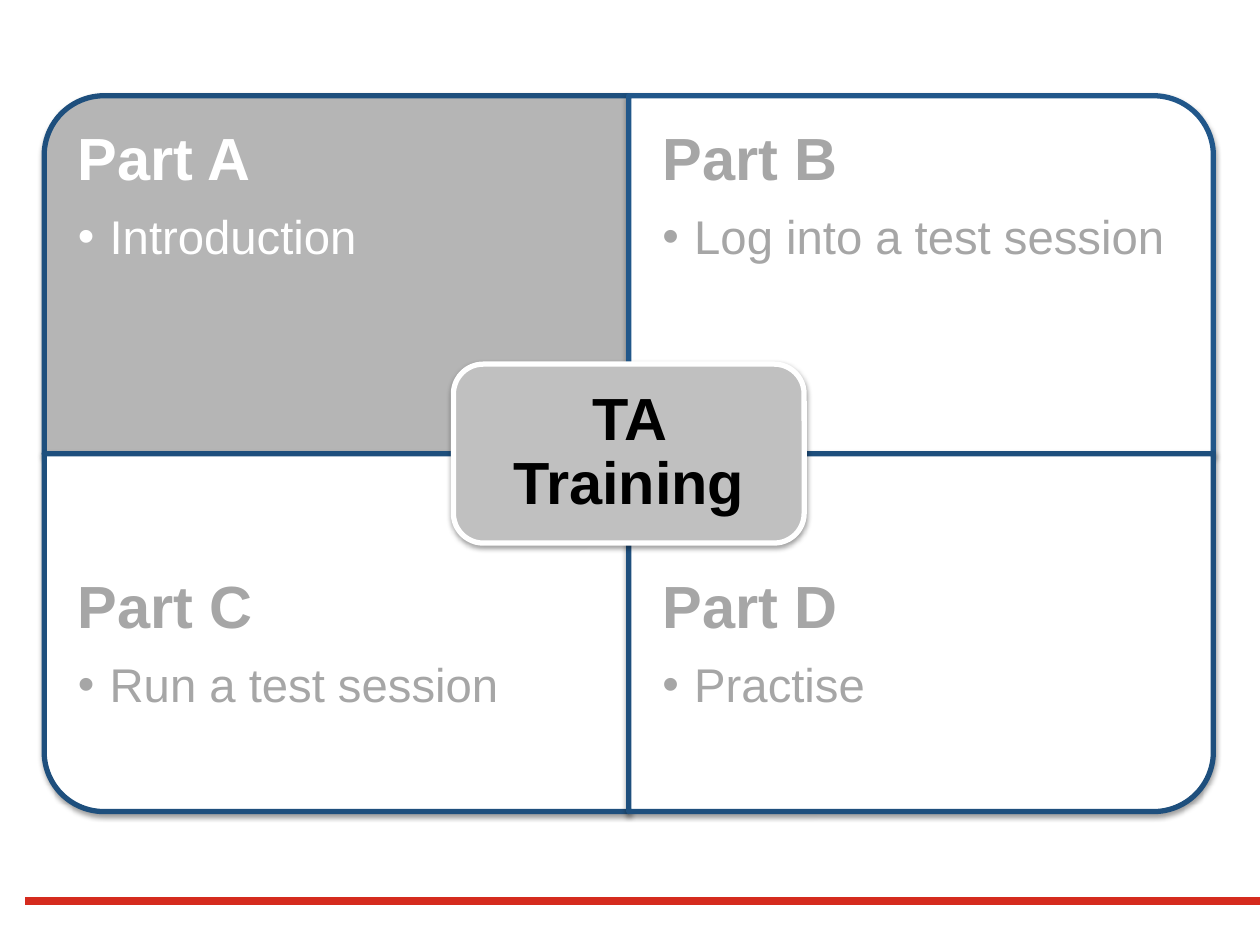
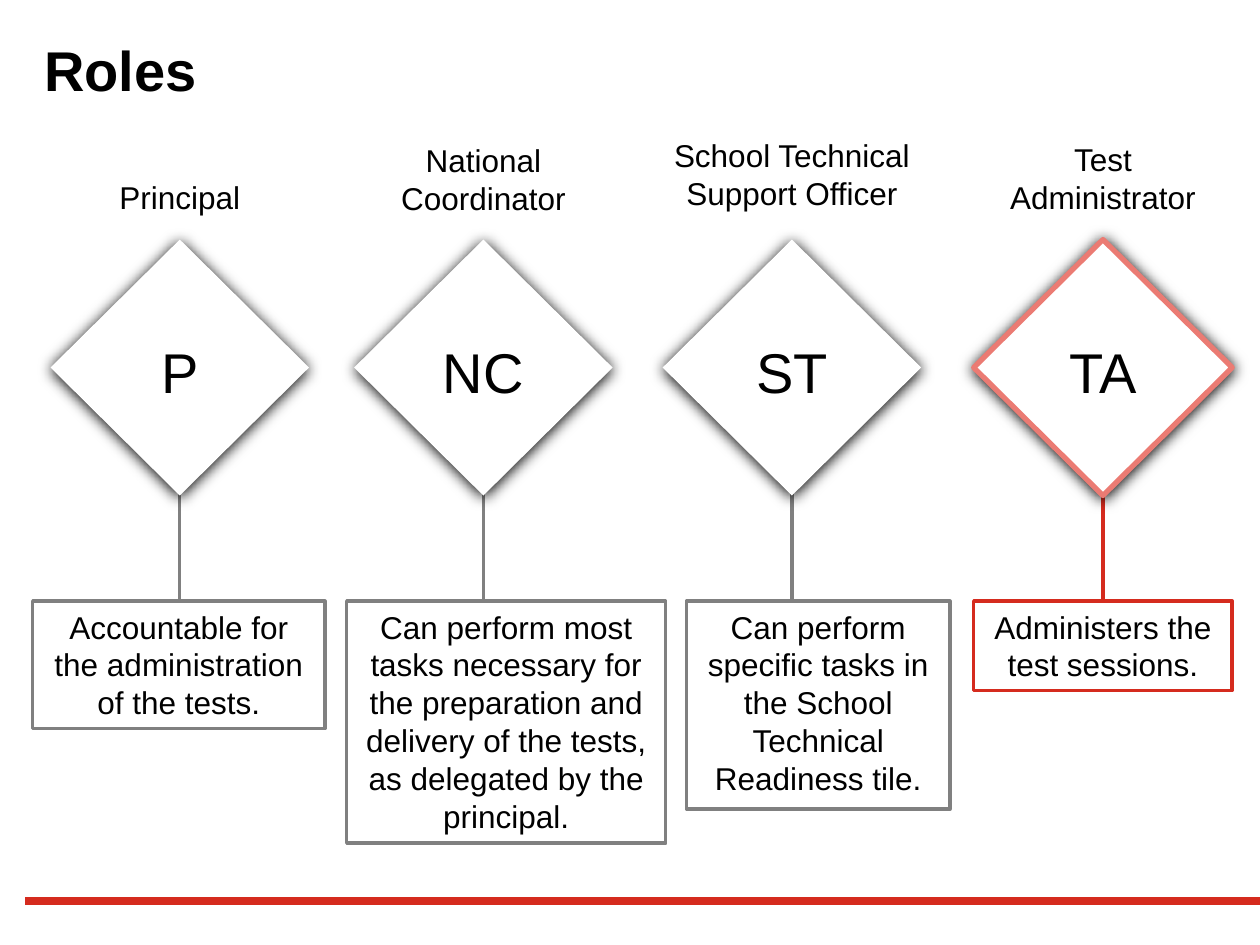
from dataclasses import dataclass

from lxml import etree
from pptx import Presentation
from pptx.dml.color import RGBColor
from pptx.enum.shapes import MSO_CONNECTOR, MSO_SHAPE
from pptx.enum.text import MSO_ANCHOR, PP_ALIGN
from pptx.oxml.ns import qn
from pptx.util import Cm, Pt

ROUND_ONE, ROUND_ALL = MSO_SHAPE.ROUND_1_RECTANGLE, MSO_SHAPE.ROUNDED_RECTANGLE
CALLOUT, DIAMOND = MSO_SHAPE.LINE_CALLOUT_1, MSO_SHAPE.FLOWCHART_DECISION
LEFT, CENTER = PP_ALIGN.LEFT, PP_ALIGN.CENTER
TOP, MIDDLE = MSO_ANCHOR.TOP, MSO_ANCHOR.MIDDLE

FONT = "Arial"
COLORS = {
    "white": "FFFFFF", "black": "000000", "red": "D52B1E", "pink": "EB7B73",
    "grey": "808080", "muted": "A6A6A6", "active": "B5B5B5", "hub": "C0C0C0",
    "navy": "1E4F7D", "blue": "21578A",
}


@dataclass
class Role:
    code: str
    label: str
    label_top: float
    diamond_left: float
    duty: str
    duty_box: tuple  # left, width, height
    line: str = "grey"
    outline: str = ""


# name, task, column, row, rotation, fill, line, text colour
PARTS = [
    ("Part A", "Introduction", 0, 0, 270, "active", "navy", "white"),
    ("Part B", "Log into a test session", 1, 0, 0, "white", "blue", "muted"),
    ("Part C", "Run a test session", 0, 1, 180, "white", "navy", "muted"),
    ("Part D", "Practise", 1, 1, 90, "white", "navy", "muted"),
]

ROLES = [
    Role("P", "Principal", 3.45, 1.02,
         "Accountable for the administration of the tests.", (0.66, 5.89, 2.57)),
    Role("NC", "National\vCoordinator", 2.72, 7.14,
         "Can perform most tasks necessary for the preparation and delivery "
         "of the tests, as delegated by the principal.", (6.99, 6.43, 4.88)),
    Role("ST", "School Technical\vSupport Officer", 2.62, 13.36,
         "Can perform specific tasks in the School Technical Readiness tile.",
         (13.84, 5.31, 4.19)),
    Role("TA", "Test\vAdministrator", 2.69, 19.63,
         "Administers the test sessions.", (19.63, 5.21, 1.8), "red", "pink"),
]


def rgb(name):
    return RGBColor.from_string(COLORS[name])


def add_box(s, kind, x, y, w, h, fill, line="", width=3.0):
    sp = s.shapes.add_shape(kind, Cm(x), Cm(y), Cm(w), Cm(h))
    sp.shadow.inherit = False
    sp.fill.solid()
    sp.fill.fore_color.rgb = rgb(fill)
    if line:
        sp.line.color.rgb = rgb(line)
        sp.line.width = Pt(width)
    else:
        sp.line.fill.background()
    return sp


def add_shadow(sp, alpha, blur, distance):
    """Cast a black shadow straight down."""
    effects = sp.element.spPr.find(qn("a:effectLst"))
    shadow = etree.SubElement(
        effects, qn("a:outerShdw"), blurRad=str(Pt(blur)), dist=str(Pt(distance)),
        dir="5400000", rotWithShape="0")
    color = etree.SubElement(shadow, qn("a:srgbClr"), val=COLORS["black"])
    etree.SubElement(color, qn("a:alpha"), val=str(alpha * 1000))


def set_frame(sp, anchor=TOP, inset_x=0.25, inset_y=0.13):
    tf = sp.text_frame
    tf.word_wrap = True
    tf.vertical_anchor = anchor
    tf.margin_left = tf.margin_right = Cm(inset_x)
    tf.margin_top = tf.margin_bottom = Cm(inset_y)
    return tf


def write(p, text, size, color="black", bold=False, align=CENTER, spacing=1.0):
    p.text = text
    p.alignment = align
    p.line_spacing = spacing
    p.font.name = FONT
    p.font.size = Pt(size)
    p.font.bold = bold
    p.font.color.rgb = rgb(color)


def add_bullet(p):
    props = p._p.get_or_add_pPr()
    props.set("marL", str(Cm(0.64)))
    props.set("indent", str(-Cm(0.64)))
    etree.SubElement(props, qn("a:buFont"), typeface=FONT)
    etree.SubElement(props, qn("a:buChar"), char="•")
    # Default run properties must follow the bullet
    for default in props.findall(qn("a:defRPr")):
        props.append(default)


def add_master_rule(prs, s):
    """Draw the red footer rule and move it to the shared master."""
    rule = s.shapes.add_connector(
        MSO_CONNECTOR.STRAIGHT, Cm(0.51), Cm(18.16), Cm(25.4), Cm(18.16))
    rule.line.color.rgb = rgb("red")
    rule.line.width = Pt(4.2)
    etree.SubElement(rule.element.spPr, qn("a:effectLst"))
    rule.element.nvCxnSpPr.cNvPr.set("id", "20")
    prs.slide_master.shapes.element.append(rule.element)


def add_quarter(s, x, y, w, h, part):
    name, task, _, row, rotation, fill, line, color = part
    # Quarter turns swap the sides about the same centre
    sw, sh = (h, w) if rotation % 180 else (w, h)
    sp = add_box(s, ROUND_ONE, x + (w - sw) / 2, y + (h - sh) / 2, sw, sh, fill, line)
    sp.rotation = rotation
    add_shadow(sp, 38, 3.1, 1.6)

    # Text takes the outer three quarters of the height
    text = s.shapes.add_textbox(
        Cm(x), Cm(y + row * h / 4), Cm(w), Cm(h * 0.75))
    tf = set_frame(text, TOP, 0.68, 0.68)
    p = tf.paragraphs[0]
    write(p, name, 34, color, True, LEFT, 0.9)
    p.space_after = Pt(11.5)
    p = tf.add_paragraph()
    write(p, task, 27, color, False, LEFT, 0.9)
    p.level = 1
    add_bullet(p)


def add_matrix(s, x, y, w, h):
    cell_w, cell_h = w / 2, h / 2
    for part in PARTS:
        column, row = part[2:4]
        add_quarter(s, x + column * cell_w, y + row * cell_h, cell_w, cell_h, part)

    # Central hub
    hub_w, hub_h = w * 0.3, h / 4
    hub = add_box(s, ROUND_ALL, x + (w - hub_w) / 2, y + (h - hub_h) / 2,
                  hub_w, hub_h, "hub", "white")
    add_shadow(hub, 38, 3.1, 1.6)
    tf = set_frame(hub, MIDDLE, 0.36, 0.36)
    write(tf.paragraphs[0], "TA Training", 34, bold=True, spacing=0.9)


def add_role(s, role, top=4.83, w=5.21, h=5.16, duty_top=12.12):
    center_x, center_y = role.diamond_left + w / 2, top + h / 2

    # Duty callout, its leader running up behind the diamond
    left, duty_w, duty_h = role.duty_box
    duty = add_box(s, CALLOUT, left, duty_top, duty_w, duty_h, "white", role.line, 2)
    leader_x = (center_x - left) / duty_w
    leader = (0, leader_x, (center_y - duty_top) / duty_h, leader_x)
    for i, value in enumerate(leader):
        duty.adjustments[i] = value
    write(set_frame(duty).paragraphs[0], role.duty, 18)

    # Role name
    label_w = 6
    label = s.shapes.add_textbox(
        Cm(center_x - label_w / 2), Cm(role.label_top), Cm(label_w),
        Cm(1.8 if "\v" in role.label else 1.02))
    write(set_frame(label).paragraphs[0], role.label, 18)

    # Diamond
    sp = add_box(s, DIAMOND, role.diamond_left, top, w, h, "white", role.outline)
    add_shadow(sp, 100, 8.5, 1)
    tf = set_frame(sp, MIDDLE, 0, 0.1)
    write(tf.paragraphs[0], role.code, 32, spacing=1.1)


def set_title(s, text):
    title = s.shapes.title
    title.left, title.top = Cm(0.89), Cm(0.71)
    title.width, title.height = Cm(23.6), Cm(1.22)
    tf = set_frame(title, TOP, 0, 0)
    write(tf.paragraphs[0], text, 32, bold=True, align=LEFT)


def main():
    prs = Presentation()
    prs.slide_width, prs.slide_height = Cm(25.4), Cm(19.05)

    # Training overview
    s = prs.slides.add_slide(prs.slide_layouts[6])
    add_master_rule(prs, s)
    add_matrix(s, 0.89, 1.93, 23.57, 14.43)

    # Roles
    s = prs.slides.add_slide(prs.slide_layouts[5])
    set_title(s, "Roles")
    for role in ROLES:
        add_role(s, role)

    prs.save("out.pptx")


if __name__ == "__main__":
    main()
